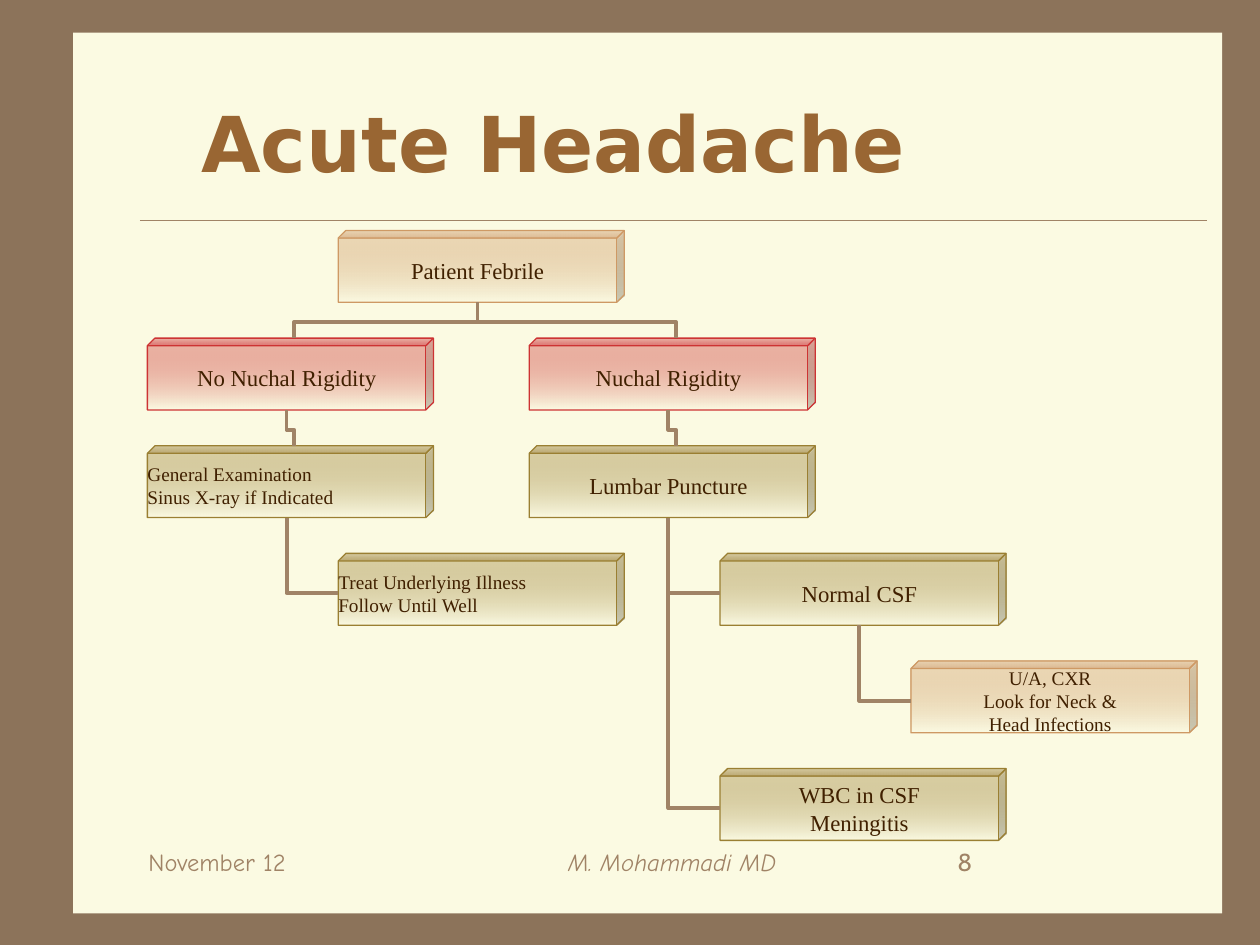
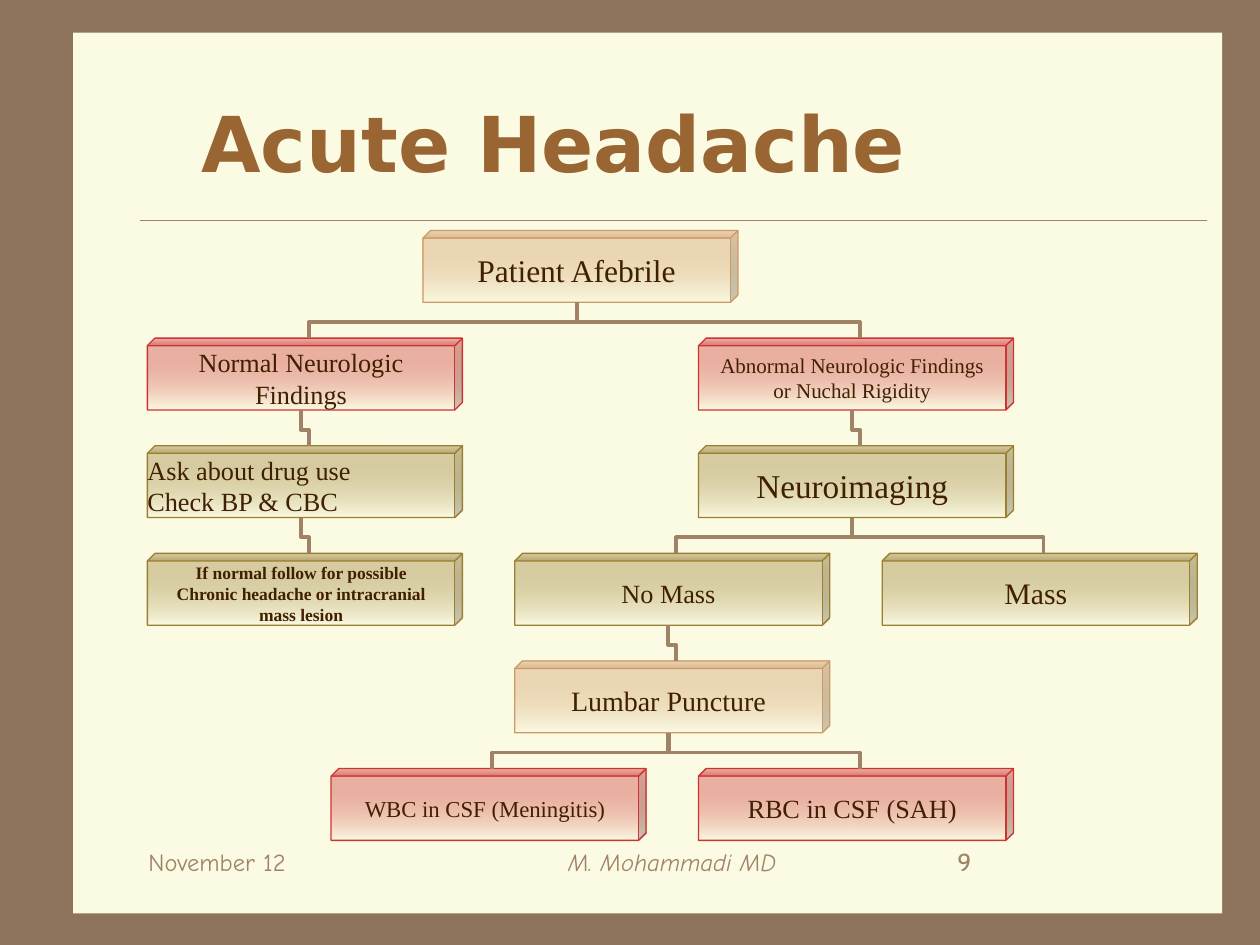
import pptx
import pptx.dml.color
import pptx.enum.dml
import pptx.enum.shapes
import pptx.enum.text
import pptx.oxml
import pptx.oxml.ns
import pptx.util
from lxml import etree

Inches = pptx.util.Inches
Pt = pptx.util.Pt
RGBColor = pptx.dml.color.RGBColor
ALIGN = pptx.enum.text.PP_ALIGN
ANCHOR = pptx.enum.text.MSO_ANCHOR
SHAPE = pptx.enum.shapes.MSO_SHAPE
CONNECTOR = pptx.enum.shapes.MSO_CONNECTOR
qn = pptx.oxml.ns.qn

FRAME = RGBColor(0x8C, 0x73, 0x5A)
CREAM = RGBColor(0xFB, 0xFA, 0xE2)
TAUPE = RGBColor(0xA0, 0x83, 0x66)
BROWN = RGBColor(0x99, 0x66, 0x33)
INK = RGBColor(0x40, 0x20, 0x00)
TAN = RGBColor(0xCE, 0x99, 0x64)
RED = RGBColor(0xCD, 0x33, 0x33)
OLIVE = RGBColor(0x9A, 0x7F, 0x32)

CHART_LEFT, CHART_TOP, ROW_STEP = 1.17, 1.83, 0.854
BOX_HEIGHT, BOX_DEPTH = 0.57, 0.06
CUBE_TOP, CUBE_LEFT, CUBE_BOTTOM = 0, 2, 3

FEBRILE = {
    "febrile": dict(text="Patient Febrile", col=1, row=0, color=TAN),
    "no rigidity": dict(text="No Nuchal Rigidity", col=0, row=1, color=RED),
    "rigidity": dict(text="Nuchal Rigidity", col=2, row=1, color=RED),
    "exam": dict(text="General Examination\nSinus X-ray if Indicated",
                 col=0, row=2, size=11, align=ALIGN.LEFT),
    "treat": dict(text="Treat Underlying Illness\nFollow Until Well",
                  col=1, row=3, size=11, align=ALIGN.LEFT),
    "puncture": dict(text="Lumbar Puncture", col=2, row=2),
    "normal csf": dict(text="Normal CSF", col=3, row=3),
    "infections": dict(text="U/A, CXR\nLook for Neck &\nHead Infections",
                       col=4, row=4, color=TAN, size=11),
    "meningitis": dict(text="WBC in CSF\nMeningitis", col=3, row=5),
}
FEBRILE_BRANCHES = [("febrile", "no rigidity"), ("febrile", "rigidity"),
                    ("no rigidity", "exam"), ("rigidity", "puncture")]
FEBRILE_HANGERS = [("exam", "treat"), ("puncture", "normal csf"),
                   ("puncture", "meningitis"), ("normal csf", "infections")]

AFEBRILE = {
    "afebrile": dict(text="Patient Afebrile", col=1.5, row=0, color=TAN, size=18),
    "normal": dict(text="Normal Neurologic\nFindings", col=0, row=1, color=RED, size=15),
    "abnormal": dict(text="Abnormal Neurologic Findings\nor Nuchal Rigidity",
                     col=3, row=1, color=RED, size=12),
    "ask": dict(text="Ask about drug use\nCheck BP & CBC",
                col=0, row=2, size=15, align=ALIGN.LEFT),
    "follow": dict(text="If normal follow for possible\n"
                        "Chronic headache or intracranial\nmass lesion",
                   col=0, row=3, size=10, bold=True),
    "imaging": dict(text="Neuroimaging", col=3, row=2, size=19),
    "no mass": dict(text="No Mass", col=2, row=3, size=15),
    "puncture": dict(text="Lumbar Puncture", col=2, row=4, color=TAN, size=16),
    "mass": dict(text="Mass", col=4, row=3, size=17),
    "wbc": dict(text="WBC in CSF (Meningitis)", col=1, row=5, color=RED),
    "rbc": dict(text="RBC in CSF (SAH)", col=3, row=5, color=RED, size=15),
}
AFEBRILE_BRANCHES = [("afebrile", "normal"), ("afebrile", "abnormal"),
                     ("normal", "ask"), ("ask", "follow"), ("abnormal", "imaging"),
                     ("imaging", "no mass"), ("imaging", "mass"),
                     ("no mass", "puncture"), ("puncture", "wbc"), ("puncture", "rbc")]


def write_text(tf, text, font="Times New Roman", size=13, color=INK, bold=False,
               italic=False, align=ALIGN.LEFT, anchor=ANCHOR.MIDDLE):
    """Write each line of text as a paragraph in one format."""
    tf.word_wrap = True
    tf.vertical_anchor = anchor
    for i, line in enumerate(text.split("\n")):
        p = tf.add_paragraph() if i else tf.paragraphs[0]
        p.alignment = align
        r = p.add_run()
        r.text = line
        r.font.name, r.font.size = font, Pt(size)
        r.font.bold, r.font.italic = bold, italic
        r.font.color.rgb = color


def add_label(s, left, top, width, height, text, **fmt):
    """Add a text box."""
    sp = s.shapes.add_textbox(Inches(left), Inches(top), Inches(width), Inches(height))
    write_text(sp.text_frame, text, **fmt)


def add_line(s, kind, x1, y1, x2, y2, weight):
    """Add a taupe connector without shadow."""
    sp = s.shapes.add_connector(kind, Inches(x1), Inches(y1), Inches(x2), Inches(y2))
    sp.line.color.rgb = TAUPE
    sp.line.width = Pt(weight)
    etree.SubElement(sp._element.spPr, qn("a:effectLst"))
    return sp


def add_box(s, step, width, text, col, row, color=OLIVE, **fmt):
    """Add a cube at a grid place, fading from its colour to cream."""
    sp = s.shapes.add_shape(SHAPE.CUBE, Inches(CHART_LEFT + col * step),
                            Inches(CHART_TOP + row * ROW_STEP),
                            Inches(width), Inches(BOX_HEIGHT))
    sp.shadow.inherit = False
    sp.adjustments[0] = BOX_DEPTH / BOX_HEIGHT
    sp.fill.gradient()
    sp.fill.gradient_angle = 270
    for stop, position, shade in zip(sp.fill.gradient_stops, (0, 1), (color, CREAM)):
        stop.position = position
        stop.color.rgb = shade
    first = sp._element.spPr.find(".//" + qn("a:srgbClr"))
    etree.SubElement(first, qn("a:alpha"), val="40000")
    sp.line.color.rgb = color
    sp.line.width = Pt(0.75)
    tf = sp.text_frame
    tf.margin_left = tf.margin_right = tf.margin_top = tf.margin_bottom = 0
    write_text(tf, text, **{"align": ALIGN.CENTER, **fmt})
    return sp


def glue(sp, child, child_site, parent):
    """Tie a connector to its child and to the bottom of its parent."""
    props = sp._element.find(qn("p:nvCxnSpPr")).find(qn("p:cNvCxnSpPr"))
    for tag, box, site in (("a:stCxn", child, child_site), ("a:endCxn", parent, CUBE_BOTTOM)):
        etree.SubElement(props, qn(tag), id=str(box.shape_id), idx=str(site))


def bottom_of(box):
    """Return the middle of the lower front edge in inches."""
    return (box.left.inches + (box.width.inches - BOX_DEPTH) / 2,
            box.top.inches + box.height.inches)


def add_branch(s, parent, child):
    """Join the top of a child to its parent with a stepped line."""
    px, py = bottom_of(parent)
    cx = child.left.inches + (child.width.inches + BOX_DEPTH) / 2
    cy = child.top.inches
    rise, run = cy - py, abs(cx - px)
    left, top = (px + cx - rise) / 2, (py + cy - run) / 2
    sp = add_line(s, CONNECTOR.ELBOW, left, top, left + rise, top + run, 2.25)
    xfrm = sp._element.spPr.find(qn("a:xfrm"))
    if cx > px:
        xfrm.set("rot", "5400000")
        xfrm.set("flipH", "1")
    else:
        xfrm.set("rot", "16200000")
    guides = sp._element.spPr.find(qn("a:prstGeom")).get_or_add_avLst()
    etree.SubElement(guides, qn("a:gd"), name="adj1", fmla="val 45000")
    glue(sp, child, CUBE_TOP, parent)


def add_hanger(s, parent, child):
    """Join the left side of a child to its parent with one corner."""
    px, py = bottom_of(parent)
    cx = child.left.inches
    cy = child.top.inches + (child.height.inches + BOX_DEPTH) / 2
    sp = add_line(s, CONNECTOR.ELBOW, px, py, cx, cy, 2.25)
    sp._element.spPr.find(qn("a:xfrm")).set("rot", "10800000")
    sp._element.spPr.find(qn("a:prstGeom")).set("prst", "bentConnector2")
    glue(sp, child, CUBE_LEFT, parent)


def add_page(prs, number):
    """Add a slide with the shared frame, title and footer."""
    s = prs.slides.add_slide(prs.slide_layouts[6])
    s.background.fill.solid()
    s.background.fill.fore_color.rgb = FRAME
    sp = s.shapes.add_shape(SHAPE.RECTANGLE, Inches(0.58), Inches(0.26),
                            Inches(9.12), Inches(6.99))
    sp.shadow.inherit = False
    sp.fill.solid()
    sp.fill.fore_color.rgb = CREAM
    sp.line.fill.background()
    add_line(s, CONNECTOR.STRAIGHT, 1.11, 1.75, 9.58, 1.75, 0.25)
    footer = dict(size=14, color=TAUPE, anchor=ANCHOR.TOP)
    add_label(s, 1.08, 6.67, 2.08, 0.5, "November 12", font="Comic Neue", **footer)
    add_label(s, 3.75, 6.67, 3.17, 0.5, "M. Mohammadi MD", font="Comic Neue",
              italic=True, align=ALIGN.CENTER, **footer)
    add_label(s, 7.5, 6.67, 2.08, 0.5, str(number), font="Cabin", **footer)
    add_label(s, 1.5, 0.5, 8.5, 1.25, "Acute Headache", font="DejaVu Sans",
              size=44, color=BROWN, bold=True)
    return s


def add_flowchart(s, nodes, branches, hangers, step, width):
    """Draw the boxes of a decision tree and the lines between them."""
    boxes = {name: add_box(s, step, width, **node) for name, node in nodes.items()}
    for parent, child in branches:
        add_branch(s, boxes[parent], boxes[child])
    for parent, child in hangers:
        add_hanger(s, boxes[parent], boxes[child])


def main():
    """Build both decision trees and save them."""
    prs = pptx.Presentation()
    prs.slide_width, prs.slide_height = Inches(10), Inches(7.5)
    add_flowchart(add_page(prs, 8), FEBRILE, FEBRILE_BRANCHES, FEBRILE_HANGERS,
                  step=1.515, width=2.27)
    add_flowchart(add_page(prs, 9), AFEBRILE, AFEBRILE_BRANCHES, [],
                  step=1.458, width=2.5)
    prs.save("out.pptx")


if __name__ == "__main__":
    main()
